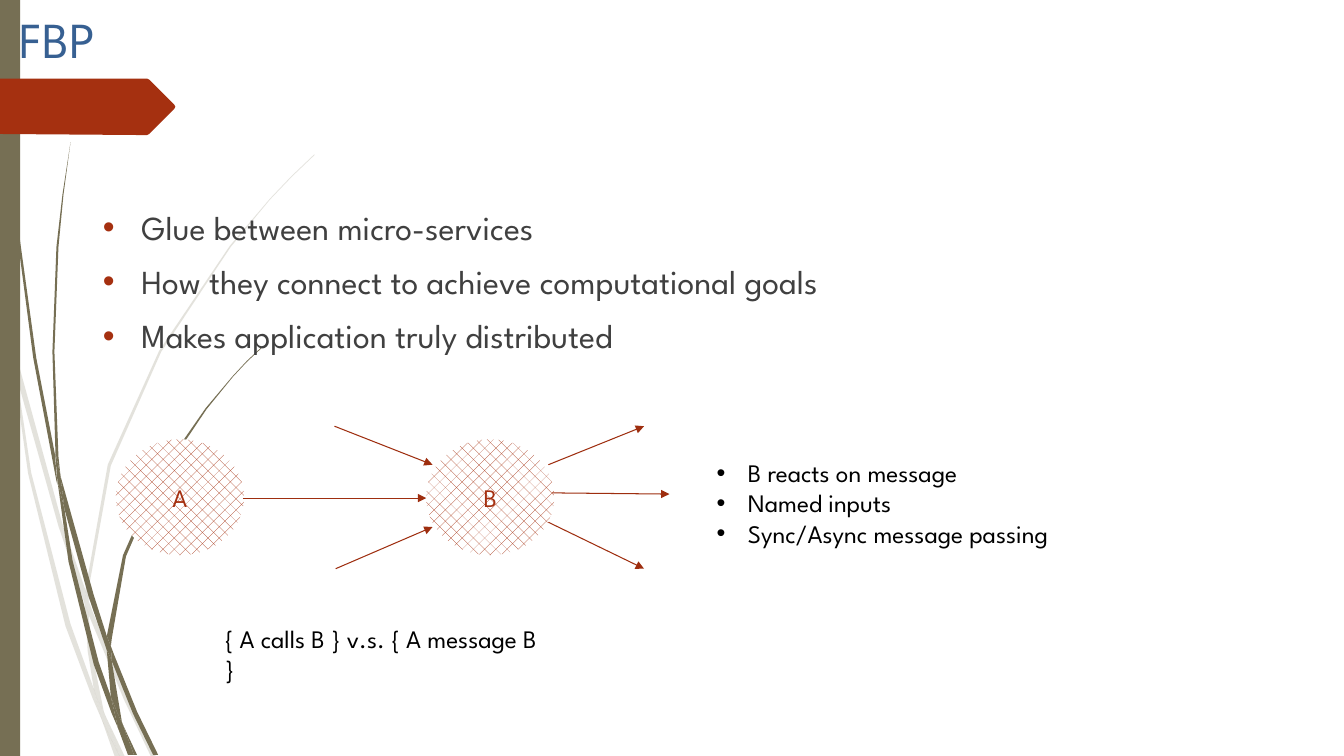
"""Builds the FBP slide: bullet list, message flow diagram and wisp decor."""
from dataclasses import dataclass

from lxml import etree
from pptx import Presentation
from pptx.dml.color import RGBColor
from pptx.enum.dml import MSO_PATTERN
from pptx.enum.shapes import MSO_CONNECTOR, MSO_SHAPE
from pptx.enum.text import MSO_ANCHOR, MSO_AUTO_SIZE, PP_ALIGN
from pptx.oxml.ns import qn
from pptx.util import Cm, Pt

OVAL, RECT = MSO_SHAPE.OVAL, MSO_SHAPE.RECTANGLE
STRAIGHT, DOTS = MSO_CONNECTOR.STRAIGHT, MSO_PATTERN.PERCENT_25
LEFT, CENTER = PP_ALIGN.LEFT, PP_ALIGN.CENTER
TOP, MIDDLE = MSO_ANCHOR.TOP, MSO_ANCHOR.MIDDLE
FIXED, GROW = MSO_AUTO_SIZE.NONE, MSO_AUTO_SIZE.SHAPE_TO_FIT_TEXT


@dataclass(frozen=True)
class Theme:
    font: str = "League Spartan"
    white: str = "FFFFFF"
    olive: str = "766F54"
    rust: str = "A53010"
    arrow: str = "9E2E0F"
    blue: str = "376092"
    gray: str = "404040"
    black: str = "000000"
    head: int = 36
    list: int = 24
    note: int = 18


THEME = Theme()
TITLE = "FBP"
POINTS = ["Glue between micro-services",
          "How they connect to achieve computational goals",
          "Makes application truly distributed"]
NOTES = ["B reacts on message", "Named inputs", "Sync/Async message passing"]
CALLS = ["{ A calls B } v.s. { A message B }"]

NODES = {"A": 2.92, "B": 10.74}
NODE_TOP, NODE_W, NODE_H = 11.07, 3.23, 2.92
ARROWS = [
    (6.12, 12.55, 10.74, 12.55),
    (8.43, 10.74, 10.9, 11.71),
    (8.46, 14.33, 10.9, 13.28),
    (13.82, 11.71, 16.23, 10.74),
    (13.82, 13.16, 16.23, 14.33),
    (13.92, 12.42, 16.87, 12.45),
]

GRID = Cm(0.0254)
PALE_WISPS = [
    [(11, 350), (9, 322), (0, 282), (0, 299), (10, 344)],
    [(58, 522), (84, 599), (85, 586), (62, 520), (14, 345), (17, 376)],
    [(92, 607), (88, 596), (88, 610), (123, 694), (150, 751), (155, 751), (127, 692)],
    [(119, 751), (124, 751), (105, 711)],
    [(93, 683), (70, 619), (31, 469), (17, 376), (11, 350), (28, 470), (65, 621),
     (92, 693), (101, 714), (99, 707)],
    [(84, 599), (87, 646), (93, 683), (96, 692), (105, 711), (103, 706), (91, 646),
     (88, 610), (88, 608)],
    [(88, 584), (110, 462), (160, 349), (229, 245), (268, 198), (290, 175), (312, 154),
     (312, 153), (289, 175), (268, 197), (228, 244), (158, 348), (107, 461), (85, 584),
     (85, 586), (88, 596)],
    [(101, 714), (114, 751), (119, 751)],
    [(88, 608), (88, 610), (88, 596), (85, 586), (84, 599)],
    [(96, 692), (93, 683), (99, 707), (101, 714), (119, 751), (105, 711)],
]
DARK_WISPS = [
    [(7, 110), (17, 233), (33, 355), (56, 477), (57, 481), (55, 457), (55, 453),
     (36, 355), (19, 232), (8, 109), (5, 48), (4, 0), (3, 0), (4, 48)],
    [(88, 592), (106, 645), (106, 633), (106, 631), (93, 590), (60, 472), (64, 505)],
    [(113, 649), (110, 641), (111, 656), (132, 708), (152, 749), (157, 749), (136, 706)],
    [(110, 691), (98, 657), (72, 556), (64, 505), (57, 477), (68, 557), (93, 659),
     (111, 708), (117, 722), (116, 717)],
    [(60, 472), (58, 453), (54, 349), (58, 245), (63, 193), (70, 141), (62, 193),
     (56, 245), (52, 349), (55, 449)],
    [(133, 749), (136, 749), (122, 719)],
    [(57, 477), (64, 505), (60, 472), (55, 449), (55, 453)],
    [(111, 633), (125, 552), (158, 476), (205, 406), (231, 374), (245, 359), (261, 344),
     (260, 344), (245, 358), (231, 373), (204, 405), (156, 474), (122, 551), (106, 631),
     (110, 641)],
    [(117, 722), (127, 749), (131, 749)],
    [(106, 645), (110, 691), (116, 706), (122, 719), (121, 716), (111, 656), (109, 651)],
    [(106, 645), (109, 651), (111, 656), (110, 641), (106, 631), (106, 633)],
    [(116, 706), (110, 691), (116, 717), (117, 722), (130, 749), (133, 749), (122, 719)],
]
BANNER = [(173, 108), (148, 133), (146, 134), (136, 134), (0, 133), (0, 78), (146, 78),
          (148, 79), (173, 104), (174, 106)]


def rgb(code):
    return RGBColor.from_string(code)


def plain(shape, color=None):
    shape.shadow.inherit = False
    shape.line.fill.background()
    if color:
        shape.fill.solid()
        shape.fill.fore_color.rgb = rgb(color)


def outline(shapes, points, color):
    form = shapes.build_freeform(*points[0], scale=GRID)
    form.add_line_segments(points[1:], close=True)
    shape = form.convert_to_shape()
    plain(shape, color)
    return shape


def wisps(slide, forms, alpha=None):
    group = slide.shapes.add_group_shape()
    for points in forms:
        shape = outline(group.shapes, points, THEME.olive)
        if alpha:
            paint = shape.element.find(".//" + qn("a:srgbClr"))
            etree.SubElement(paint, qn("a:alpha")).set("val", str(alpha * 1000))


def place(shape, left, top, width, height):
    shape.left, shape.top = Cm(left), Cm(top)
    shape.width, shape.height = Cm(width), Cm(height)


def bullet(para, indent, color):
    props = para._p.get_or_add_pPr()
    props.set("marL", str(Cm(indent)))
    props.set("indent", str(-Cm(indent)))
    paint = etree.SubElement(props, qn("a:buClr"))
    etree.SubElement(paint, qn("a:srgbClr")).set("val", color)
    etree.SubElement(props, qn("a:buFont")).set("typeface", "Arial")
    etree.SubElement(props, qn("a:buChar")).set("char", "•")


def write(shape, lines, size, color, align=LEFT, anchor=TOP, fit=FIXED,
          before=0, space=1.0, indent=0, mark=None):
    frame = shape.text_frame
    frame.word_wrap, frame.auto_size = True, fit
    frame.vertical_anchor = anchor
    frame.text = "\n".join(lines)
    for para in frame.paragraphs:
        para.alignment, para.line_spacing = align, space
        para.space_before = Pt(before)
        para.font.name, para.font.size = THEME.font, Pt(size)
        para.font.color.rgb = rgb(color)
        if indent:
            bullet(para, indent, mark or color)


def node(slide, name, left):
    shape = slide.shapes.add_shape(OVAL, 0, 0, 0, 0)
    place(shape, left, NODE_TOP, NODE_W, NODE_H)
    plain(shape)
    shape.fill.patterned()
    shape.fill.pattern = DOTS
    shape.fill.fore_color.rgb = rgb(THEME.rust)
    shape.fill.back_color.rgb = rgb(THEME.white)
    write(shape, [name], THEME.note, THEME.rust, CENTER, MIDDLE)


def arrow(slide, ends):
    link = slide.shapes.add_connector(STRAIGHT, *map(Cm, ends))
    link.line.color.rgb, link.line.width = rgb(THEME.arrow), Pt(0.75)
    etree.SubElement(link.line._get_or_add_ln(), qn("a:tailEnd")).set("type", "triangle")
    etree.SubElement(link.element.spPr, qn("a:effectLst"))


def label(slide, box, lines, **style):
    shape = slide.shapes.add_textbox(*map(Cm, box))
    write(shape, lines, THEME.note, THEME.black, fit=GROW, **style)


def main():
    deck = Presentation()
    deck.slide_width, deck.slide_height = Cm(33.87), Cm(19.05)
    slide = deck.slides.add_slide(deck.slide_layouts[1])
    slide.background.fill.solid()
    slide.background.fill.fore_color.rgb = rgb(THEME.white)

    wisps(slide, PALE_WISPS, alpha=20)
    wisps(slide, DARK_WISPS)
    band = slide.shapes.add_shape(RECT, 0, 0, Cm(0.51), deck.slide_height)
    plain(band, THEME.olive)
    outline(slide.shapes, BANNER, THEME.rust)

    title, body = slide.shapes.title, slide.placeholders[1]
    for holder in (body, title):
        holder.element.getparent().append(holder.element)
    place(body, 2.34, 5.08, 29.21, 4.14)
    write(body, POINTS, THEME.list, THEME.gray, before=10, indent=0.97, mark=THEME.rust)
    place(title, 0, 0.05, 29.21, 2.01)
    write(title, [TITLE], THEME.head, THEME.blue, anchor=MIDDLE, space=0.9)
    title.text_frame.margin_left = Cm(0.5)

    for name, left in NODES.items():
        node(slide, name, left)
    for ends in ARROWS:
        arrow(slide, ends)
    label(slide, (5.41, 15.57, 8.41, 1.02), CALLS)
    label(slide, (17.81, 11.4, 10.59, 2.57), NOTES, indent=0.79)
    deck.save("out.pptx")


if __name__ == "__main__":
    main()
